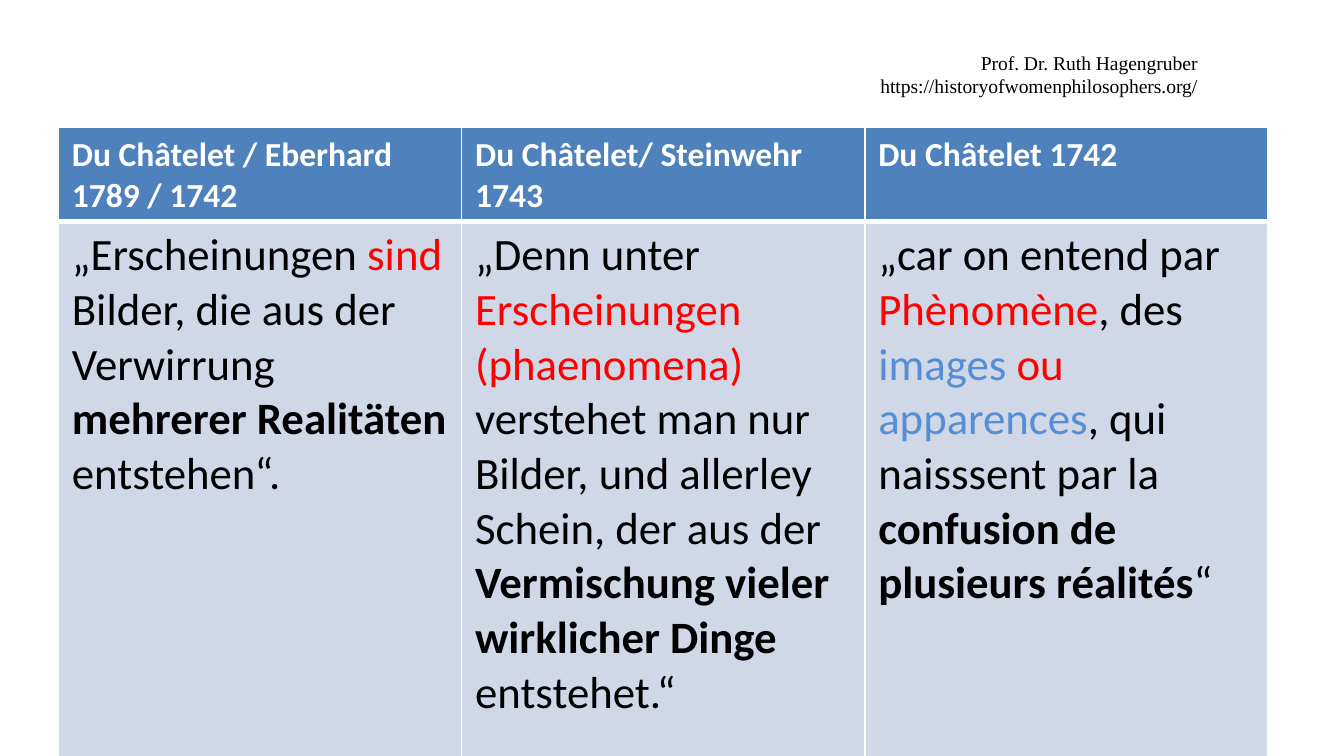
from dataclasses import dataclass
from lxml.etree import SubElement as Sub
from pptx import Presentation
from pptx.dml.color import RGBColor as Rgb
from pptx.enum.text import PP_ALIGN as Align
from pptx.oxml.ns import qn
from pptx.util import Inches, Pt


@dataclass(frozen=True)
class Theme:
    """Colours, fonts and type sizes."""
    ink: str = "000000"
    white: str = "FFFFFF"
    red: str = "FF0000"
    blue: str = "558ED5"
    head: str = "4F81BD"
    body: str = "D0D8E8"
    sans: str = "Calibri"
    serif: str = "Times New Roman"
    small: float = 10.5
    mid: float = 18
    large: float = 24
    thin: float = 1
    thick: float = 3


class Deck:
    """Holds the theme and the current slide."""

    def __init__(self, theme, wide, ratio):
        """Start a deck with one blank slide."""
        self.theme = theme
        self.prs = Presentation()
        self.prs.slide_width = Inches(wide)
        self.prs.slide_height = Inches(wide * ratio)
        self.slide = self.prs.slides.add_slide(self.prs.slide_layouts[6])

    def across(self, share):
        """Turn a percentage of the slide width into a length."""
        return int(self.prs.slide_width * share / 100)

    def down(self, share):
        """Turn a percentage of the slide height into a length."""
        return int(self.prs.slide_height * share / 100)

    def place(self, x, y, w, h):
        """Turn a box of percentages into lengths."""
        return self.across(x), self.down(y), self.across(w), self.down(h)

    def style(self, font, size, name, tint, bold=False):
        """Set the look of a font."""
        font.size, font.name, font.bold = Pt(size), name, bold
        font.color.rgb = Rgb.from_string(tint)

    def credit(self, text, box):
        """Add a small right-aligned text box."""
        frame = self.slide.shapes.add_textbox(*self.place(*box)).text_frame
        frame.word_wrap = True
        para = frame.paragraphs[0]
        para.text, para.alignment = text, Align.RIGHT
        self.style(para.font, self.theme.small, self.theme.serif, self.theme.ink)

    def edge(self, cell, top, base):
        """Draw white borders around a cell."""
        thin = self.theme.thin
        props = cell._tc.get_or_add_tcPr()
        for side, width in zip("LRTB", (thin, thin, top, base)):
            line = Sub(props, qn(f"a:ln{side}"), w=str(Pt(width)))
            fill = Sub(line, qn("a:solidFill"))
            Sub(fill, qn("a:srgbClr"), val=self.theme.white)

    def cell(self, cell, runs, size, tint, fill, top, base):
        """Fill one cell with runs of text, colour and weight."""
        self.edge(cell, top, base)
        cell.fill.solid()
        cell.fill.fore_color.rgb = Rgb.from_string(fill)
        para = cell.text_frame.paragraphs[0]
        self.style(para.font, size, self.theme.sans, tint)
        for text, hue, bold in runs:
            run = para.add_run()
            run.text = text
            self.style(run.font, size, self.theme.sans, hue, bold)

    def table(self, heads, quotes, box, rows):
        """Add a table of headings above quotations."""
        t = self.theme
        grid = self.slide.shapes.add_table(2, len(heads), *self.place(*box)).table
        for row, share in zip(grid.rows, rows):
            row.height = self.down(share)
        for col, (head, quote) in enumerate(zip(heads, quotes)):
            self.cell(grid.cell(0, col), [(head, t.white, True)],
                      t.mid, t.white, t.head, t.thin, t.thick)
            self.cell(grid.cell(1, col), quote,
                      t.large, t.ink, t.body, t.thick, t.thin)

    def save(self):
        """Write the deck to disk."""
        self.prs.save("out.pptx")


def main():
    """Build the slide."""
    t = Theme()

    def plain(text, hue=t.ink):
        """Make a regular run."""
        return text, hue, False

    def strong(text):
        """Make a bold run."""
        return text, t.ink, True

    heads = ["Du Châtelet / Eberhard 1789 / 1742",
             "Du Châtelet/ Steinwehr 1743",
             "Du Châtelet 1742"]
    quotes = [
        [plain("„Erscheinungen "), plain("sind", t.red),
         plain(" Bilder, die aus der Verwirrung "),
         strong("mehrerer Realitäten"), plain(" entstehen“.")],
        [plain("„Denn unter "), plain("Erscheinungen (phaenomena) ", t.red),
         plain("verstehet man nur Bilder, und allerley Schein, der aus der "),
         strong("Vermischung vieler wirklicher Dinge"), plain(" entstehet.“")],
        [plain("„car on entend par "), plain("Phènomène", t.red),
         plain(", des "), plain("images ", t.blue), plain("ou ", t.red),
         plain("apparences", t.blue), plain(", qui naisssent par la "),
         strong("confusion de plusieurs réalités"), plain("“")],
    ]
    deck = Deck(t, 10, 9 / 16)
    deck.credit("Prof. Dr. Ruth Hagengruber https://historyofwomenphilosophers.org/",
                (59.4, 5.8, 30.7, 8))
    deck.table(heads, quotes, (4.35, 16.85, 90, 83.2), (10.1, 70.8))
    deck.save()


if __name__ == "__main__":
    main()
